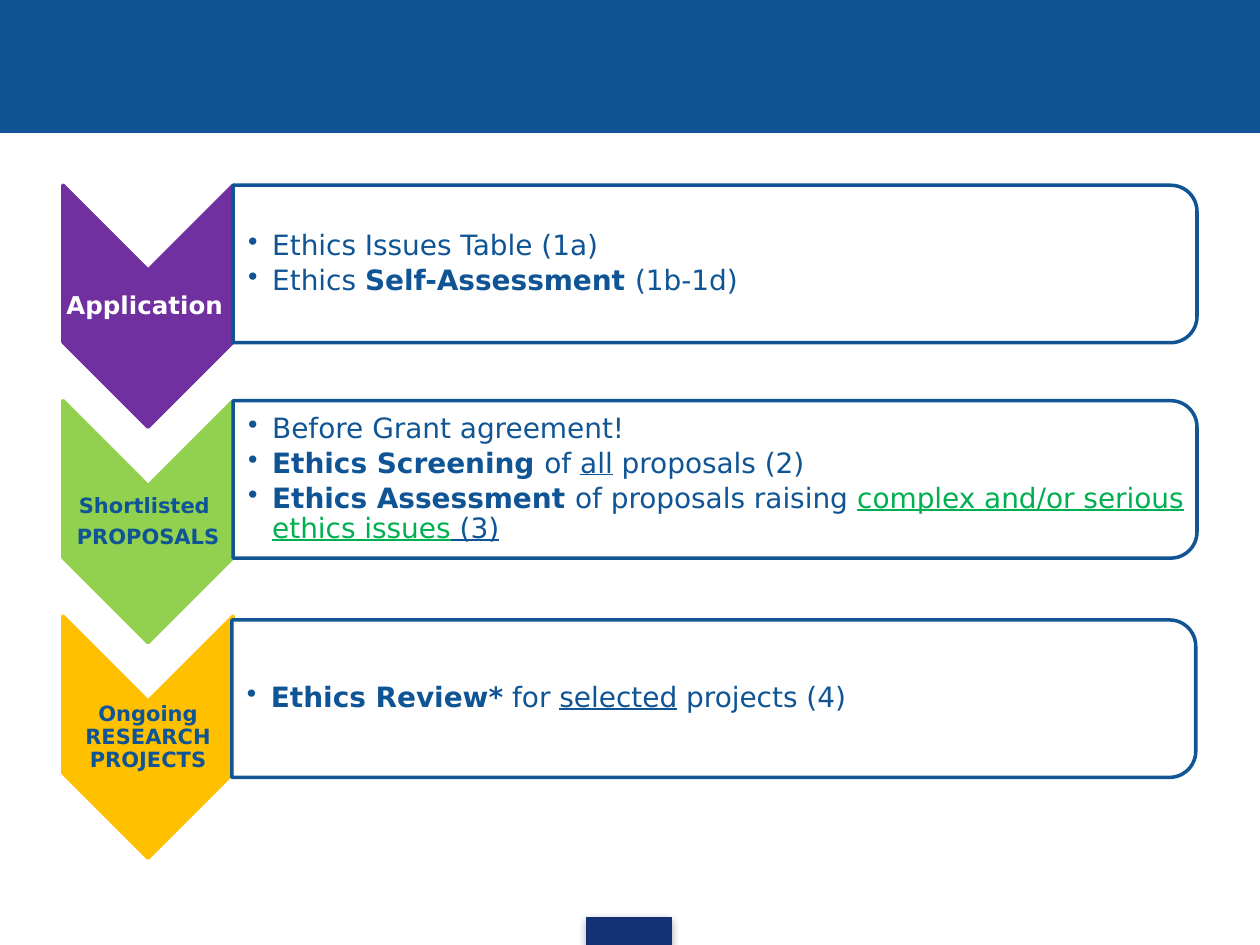
import pptx
import pptx.util
import pptx.dml.color
import pptx.enum.shapes
import pptx.enum.text
import pptx.oxml
import pptx.oxml.ns
from lxml import etree

Inches, Pt = pptx.util.Inches, pptx.util.Pt
RGBColor = pptx.dml.color.RGBColor
SHAPE = pptx.enum.shapes.MSO_SHAPE
qn = pptx.oxml.ns.qn

NAVY = RGBColor(0x0F, 0x54, 0x94)
STEEL = RGBColor(0x11, 0x55, 0x95)
FOOTER = RGBColor(0x13, 0x31, 0x76)
PURPLE = RGBColor(0x70, 0x30, 0xA0)
LIME = RGBColor(0x92, 0xD0, 0x50)
AMBER = RGBColor(0xFF, 0xC0, 0x00)
GREEN = RGBColor(0x00, 0xB0, 0x50)
WHITE = RGBColor(0xFF, 0xFF, 0xFF)
FONT = "DejaVu Sans"

BOLD = {"bold": True}
UNDER = {"underline": True}
GREEN_UNDER = {"underline": True, "color": GREEN}

STAGES = [
    {"label": [[("Application", BOLD), (" ", {"size": 12})]],
     "label_size": 14, "label_color": WHITE, "fill": PURPLE, "border": NAVY,
     "nudge": (0, 0),
     "steps": [[("Ethics Issues Table (1a)", {})],
               [("Ethics ", {}), ("Self-Assessment ", BOLD), ("(1b-1d)", {})]]},
    {"label": [[("Shortlisted ", BOLD)], [("PROPOSALS", BOLD)]],
     "label_size": 12, "label_color": NAVY, "fill": LIME, "border": STEEL,
     "nudge": (0, 0),
     "steps": [[("Before Grant agreement!", {"color": STEEL})],
               [("Ethics Screening ", BOLD), ("of ", {}), ("all", UNDER),
                (" proposals (2)", {})],
               [("Ethics Assessment ", BOLD), ("of proposals raising ", {}),
                ("complex and/or serious ethics issues", GREEN_UNDER),
                (" (3)", UNDER)]]},
    {"label": [[("Ongoing RESEARCH PROJECTS", BOLD)]],
     "label_size": 12, "label_color": NAVY, "fill": AMBER, "border": STEEL,
     "nudge": (-0.01, 0.03),
     "steps": [[("Ethics Review*", BOLD), (" for ", {}), ("selected", UNDER),
                (" projects (4)", {})]]},
]

SLIDE_W, SLIDE_H = 10, 7.5
LEFT, TOP, PITCH = 0.5, 1.47, 1.71
ARROW_W, ARROW_H = 1.35, 1.92
PANEL_W, PANEL_H = 7.65, 1.25
LABEL_H = 0.58


def add_block(slide, kind, box, fill, border, width=2.0, turned=False):
    left, top, w, h = box
    if turned:
        left, top, w, h = left + (w - h) / 2, top + (h - w) / 2, h, w
    block = slide.shapes.add_shape(kind, *map(Inches, (left, top, w, h)))
    block.rotation = 90 if turned else 0
    block.shadow.inherit = False
    block.fill.solid()
    block.fill.fore_color.rgb = fill
    block.line.color.rgb = border
    block.line.width = Pt(width)
    return block


def add_words(slide, box, paragraphs, size, color, after, inset=0.01, bulleted=False):
    words = slide.shapes.add_textbox(*map(Inches, box))
    frame = words.text_frame
    frame.word_wrap = True
    frame.vertical_anchor = pptx.enum.text.MSO_ANCHOR.MIDDLE
    frame.margin_left = Inches(inset)
    frame.margin_top = frame.margin_right = frame.margin_bottom = Inches(0.01)
    for index, pieces in enumerate(paragraphs):
        paragraph = frame.paragraphs[0] if index == 0 else frame.add_paragraph()
        paragraph.line_spacing = 0.9
        paragraph.space_after = Pt(after)
        if bulleted:
            paragraph.level = 1
            properties = paragraph._p.get_or_add_pPr()
            properties.set("marL", str(Inches(0.19)))
            properties.set("indent", str(-Inches(0.19)))
            etree.SubElement(properties, qn("a:buChar")).set("char", "•")
        else:
            paragraph.alignment = pptx.enum.text.PP_ALIGN.CENTER
        paragraph.font.name = FONT
        for text, style in pieces:
            run = paragraph.add_run()
            run.text = text
            run.font.name = FONT
            run.font.size = Pt(style.get("size", size))
            run.font.bold = style.get("bold", False)
            run.font.underline = style.get("underline", False)
            run.font.color.rgb = style.get("color", color)


def add_stage(slide, row, stage):
    top = TOP + row * PITCH
    add_block(slide, SHAPE.CHEVRON, (LEFT, top, ARROW_W, ARROW_H),
              stage["fill"], stage["fill"], turned=True)
    add_words(slide, (LEFT, top + ARROW_W / 2, ARROW_W, LABEL_H),
              stage["label"], stage["label_size"], stage["label_color"], 4.5)

    dx, dy = stage["nudge"]
    panel_left, panel_top = LEFT + ARROW_W + dx, top + dy
    panel = add_block(slide, SHAPE.ROUND_2_SAME_RECTANGLE,
                      (panel_left, panel_top, PANEL_W, PANEL_H),
                      WHITE, stage["border"], turned=True)
    white = panel._element.spPr.find(qn("a:solidFill")).find(qn("a:srgbClr"))
    etree.SubElement(white, qn("a:alpha")).set("val", "90000")
    add_words(slide, (panel_left, panel_top + 0.06, PANEL_W - 0.06, PANEL_H - 0.12),
              stage["steps"], 16, NAVY, 2.8, inset=0.12, bulleted=True)


def add_footer_shadow(footer):
    effects = footer._element.spPr.find(qn("a:effectLst"))
    shadow = etree.SubElement(effects, qn("a:outerShdw"), blurRad=str(Pt(5)),
                              dist=str(Pt(1.8)), dir="5400000", rotWithShape="0")
    black = etree.SubElement(shadow, qn("a:srgbClr"), val="000000")
    etree.SubElement(black, qn("a:alpha"), val="35000")


def main():
    deck = pptx.Presentation()
    deck.slide_width, deck.slide_height = Inches(SLIDE_W), Inches(SLIDE_H)
    slide = deck.slides.add_slide(deck.slide_layouts[6])
    add_block(slide, SHAPE.RECTANGLE, (0, 0, SLIDE_W, 0.14 * SLIDE_H), NAVY, NAVY, 0.75)
    footer = add_block(slide, SHAPE.RECTANGLE, (4.66, SLIDE_H - 0.22, 0.67, 0.22),
                       FOOTER, FOOTER, 0.75)
    add_footer_shadow(footer)
    for row, stage in enumerate(STAGES):
        add_stage(slide, row, stage)
    deck.save("out.pptx")


if __name__ == "__main__":
    main()
